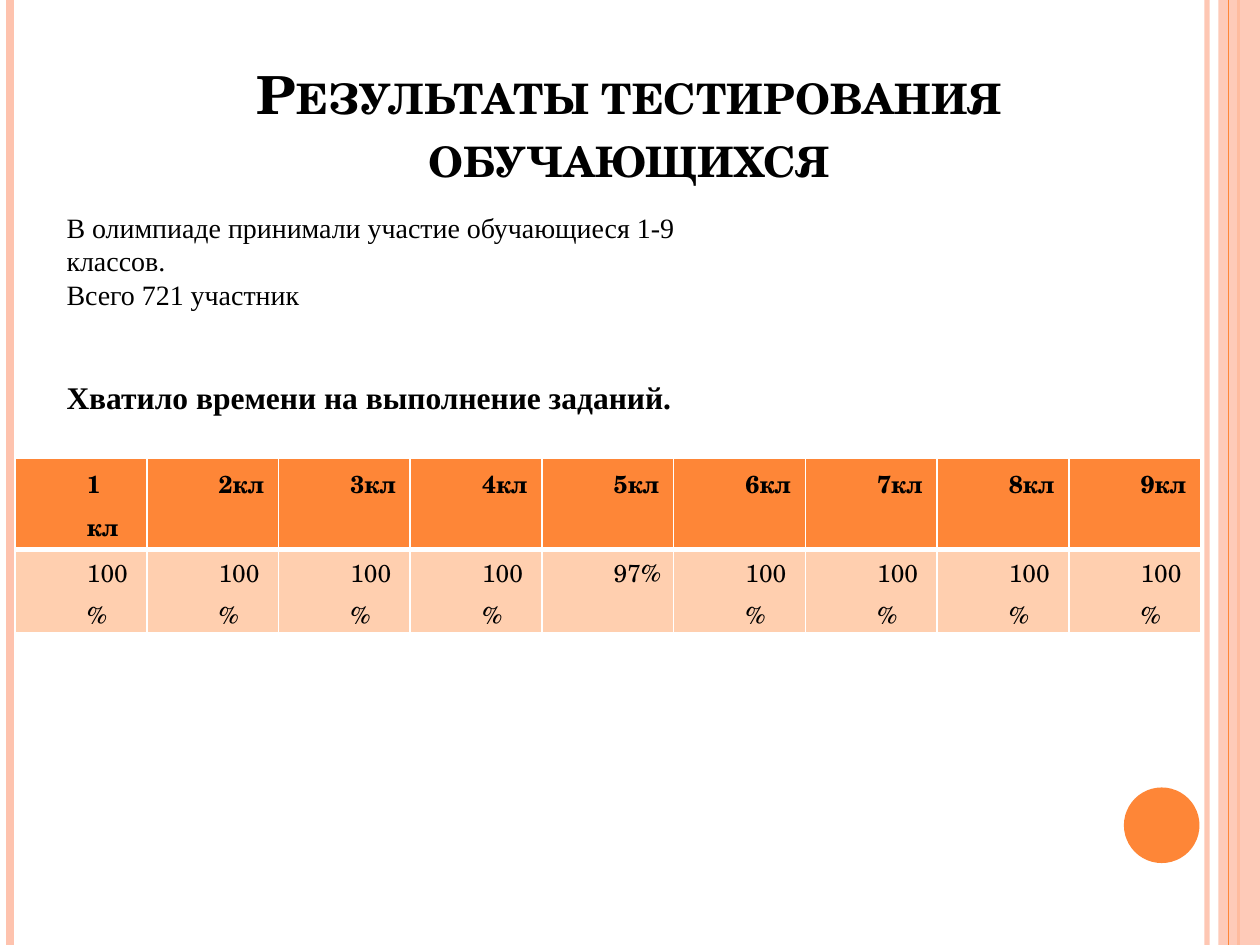
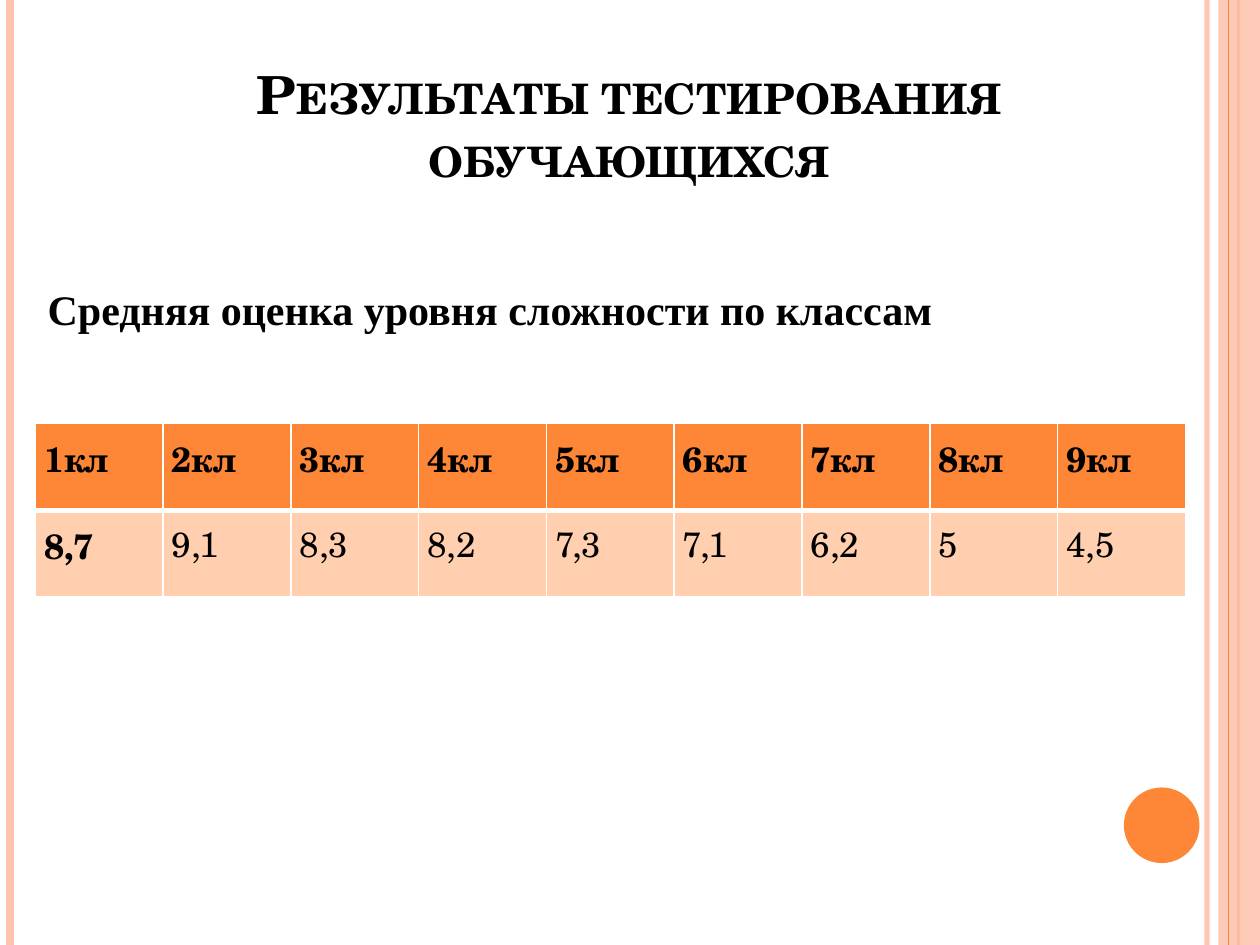
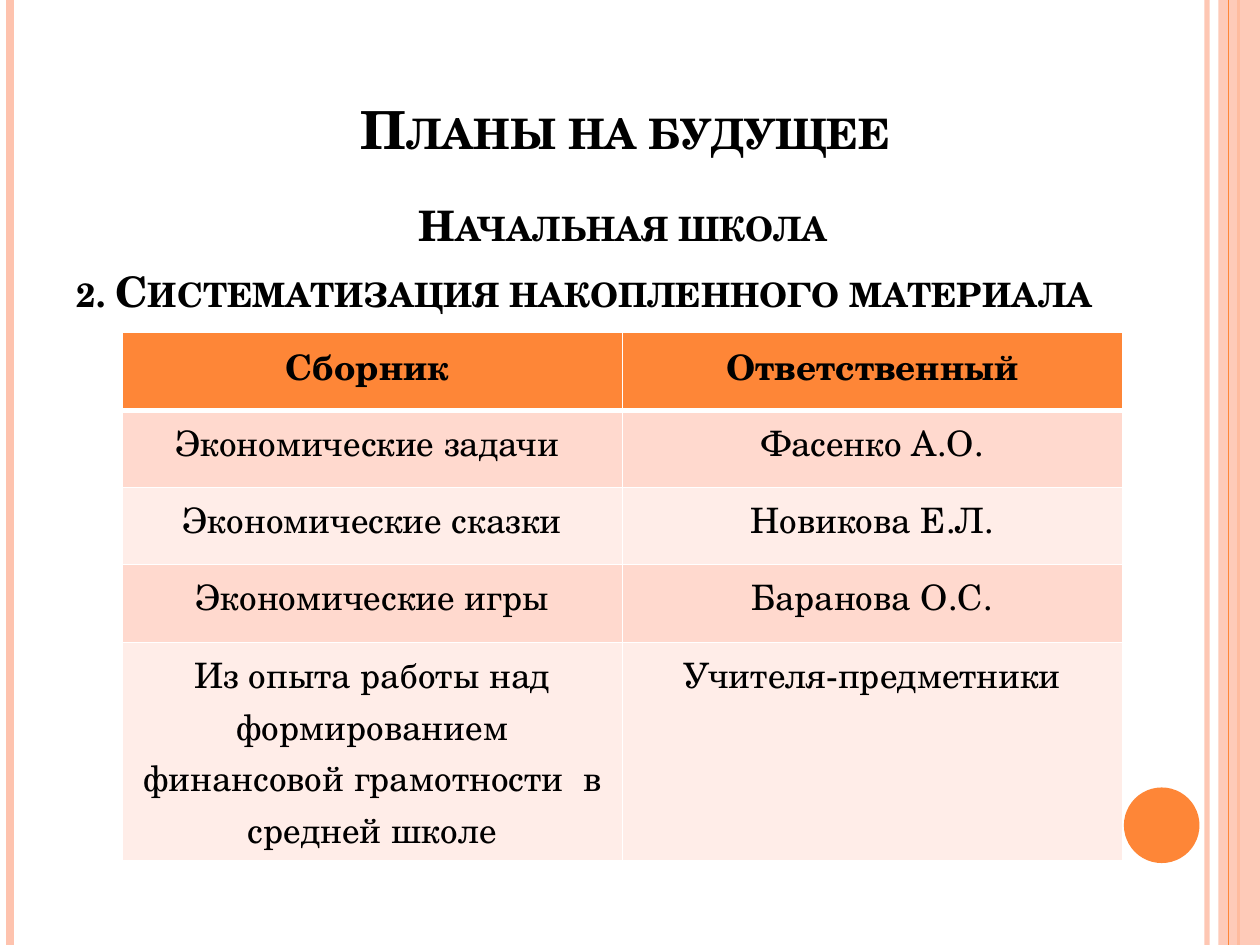
from dataclasses import dataclass

from lxml.etree import SubElement
from pptx import Presentation
from pptx.dml.color import RGBColor
from pptx.enum.shapes import MSO_CONNECTOR, MSO_SHAPE
from pptx.enum.text import MSO_ANCHOR, PP_ALIGN
from pptx.oxml.ns import qn
from pptx.util import Emu, Pt

EMU_PER_PX = 9144  # 100 px to the inch
SLIDE_WIDTH, SLIDE_HEIGHT = 1000, 750

BLACK = "000000"
WHITE = "FFFFFF"
ORANGE = "FE8637"
PEACH = "FEC3AE"
APRICOT = "FFCFAF"
ROSE = "FFD9CE"
PALE_ROSE = "FFEDE8"

SCHOLA = "TeX Gyre Schola"
TIMES = "Times New Roman"

CLASS_TABLE_MARGINS = (7, 0)
RESULTS_TITLE = "Результаты тестирования обучающихся"


@dataclass(frozen=True)
class Box:
    left: int
    top: int
    width: int
    height: int


@dataclass(frozen=True)
class Stripe:
    x: int
    color: str
    weight: float
    opacity: int = 100


@dataclass(frozen=True)
class TableStyle:
    size: int
    body_fills: tuple[str, ...]
    margins: tuple[int, int] = (10, 5)
    align: PP_ALIGN = PP_ALIGN.LEFT
    indent: int = 0
    line_spacing: float = 1.0
    bold_first_column: bool = False


STRIPES_BEHIND = (
    Stripe(958, PEACH, 3, 93),
    Stripe(8, PEACH, 4.5),
    Stripe(983, ORANGE, 1.5),
)
STRIPE_IN_FRONT = Stripe(975, ORANGE, 0.75)
SIDE_BAND = Box(967, 0, 33, SLIDE_HEIGHT)
PAGE_CIRCLE = Box(892, 625, 60, 60)
RESULTS_TITLE_BOX = Box(91, 29, 817, 125)


def px(length: int) -> Emu:
    return Emu(length * EMU_PER_PX)


def rgb(color: str) -> RGBColor:
    return RGBColor.from_string(color)


def place(box: Box) -> tuple[Emu, Emu, Emu, Emu]:
    return px(box.left), px(box.top), px(box.width), px(box.height)


def set_opacity(properties, percent: int) -> None:
    """Make the solid colour inside a fill or line partly transparent."""
    if percent < 100:
        color = next(properties.iter(qn("a:srgbClr")))
        SubElement(color, qn("a:alpha"), val=str(percent * 1000))


def add_stripe(slide, stripe: Stripe) -> None:
    connector = slide.shapes.add_connector(
        MSO_CONNECTOR.STRAIGHT, px(stripe.x), px(0), px(stripe.x), px(SLIDE_HEIGHT)
    )
    connector.line.color.rgb = rgb(stripe.color)
    connector.line.width = Pt(stripe.weight)
    properties = connector._element.spPr
    set_opacity(properties, stripe.opacity)
    SubElement(properties, qn("a:effectLst"))


def add_plain_shape(slide, preset: MSO_SHAPE, box: Box, color: str, opacity: int = 100) -> None:
    shape = slide.shapes.add_shape(preset, *place(box))
    shape.shadow.inherit = False
    shape.fill.solid()
    shape.fill.fore_color.rgb = rgb(color)
    shape.line.fill.background()
    set_opacity(shape._element.spPr, opacity)


def add_decorated_slide(presentation):
    slide = presentation.slides.add_slide(presentation.slide_layouts[6])
    for stripe in STRIPES_BEHIND:
        add_stripe(slide, stripe)
    add_plain_shape(slide, MSO_SHAPE.RECTANGLE, SIDE_BAND, PEACH, opacity=87)
    add_stripe(slide, STRIPE_IN_FRONT)
    add_plain_shape(slide, MSO_SHAPE.OVAL, PAGE_CIRCLE, ORANGE)
    return slide


def write(
    paragraph,
    text: str,
    *,
    size: int,
    font: str = SCHOLA,
    bold: bool = False,
    small_caps: bool = False,
    align: PP_ALIGN = PP_ALIGN.LEFT,
    space_before: int = 0,
    line_spacing: float = 1.0,
    indent: int = 0,
) -> None:
    paragraph.alignment = align
    paragraph.space_before = Pt(space_before)
    paragraph.line_spacing = line_spacing
    if indent:
        properties = paragraph._p.get_or_add_pPr()
        properties.set("marL", str(px(indent)))
        properties.set("indent", "0")
    run = paragraph.add_run()
    run.text = text
    run.font.size = Pt(size)
    run.font.name = font
    run.font.bold = bold
    run.font.color.rgb = rgb(BLACK)
    if small_caps:
        run._r.get_or_add_rPr().set("cap", "small")


def add_text_frame(slide, box: Box, anchor: MSO_ANCHOR, wrap: bool = True):
    frame = slide.shapes.add_textbox(*place(box)).text_frame
    frame.word_wrap = wrap
    frame.vertical_anchor = anchor
    return frame


def add_heading(slide, text: str, box: Box, size: int = 30) -> None:
    frame = add_text_frame(slide, box, MSO_ANCHOR.BOTTOM)
    write(frame.paragraphs[0], text, size=size, bold=True, small_caps=True, align=PP_ALIGN.CENTER)


def set_borders(cell, top: int, bottom: int) -> None:
    """Draw white cell borders; the side borders are 1 pt."""
    properties = cell._tc.get_or_add_tcPr()
    for side, weight in (("L", 1), ("R", 1), ("T", top), ("B", bottom)):
        line = SubElement(properties, qn(f"a:ln{side}"), w=str(Pt(weight)))
        fill = SubElement(line, qn("a:solidFill"))
        SubElement(fill, qn("a:srgbClr"), val=WHITE)


def add_table(
    slide, left: int, top: int, width: int, heights: list[int], rows: list[list[str]], style: TableStyle
) -> None:
    column_count = len(rows[0])
    box = Box(left, top, width, sum(heights))
    table = slide.shapes.add_table(len(rows), column_count, *place(box)).table
    table.horz_banding = False
    for column in table.columns:
        column.width = Emu(px(width) // column_count)
    for row_index, (texts, height) in enumerate(zip(rows, heights)):
        table.rows[row_index].height = px(height)
        is_header = row_index == 0
        fill = ORANGE if is_header else style.body_fills[(row_index - 1) % len(style.body_fills)]
        for column_index, text in enumerate(texts):
            cell = table.cell(row_index, column_index)
            cell.margin_left = cell.margin_right = px(style.margins[0])
            cell.margin_top = cell.margin_bottom = px(style.margins[1])
            set_borders(cell, top=3 if row_index == 1 else 1, bottom=3 if is_header else 1)
            cell.fill.solid()
            cell.fill.fore_color.rgb = rgb(fill)
            write(
                cell.text_frame.paragraphs[0],
                text,
                size=style.size,
                bold=is_header or (style.bold_first_column and column_index == 0),
                align=style.align,
                indent=style.indent,
                line_spacing=style.line_spacing,
            )


def build_time_slide(presentation) -> None:
    slide = add_decorated_slide(presentation)
    add_heading(slide, RESULTS_TITLE, RESULTS_TITLE_BOX)
    class_names = ["1 кл"] + [f"{number}кл" for number in range(2, 10)]
    shares = [f"{share}%" for share in (100, 100, 100, 100, 97, 100, 100, 100, 100)]
    style = TableStyle(14, (APRICOT,), CLASS_TABLE_MARGINS, indent=50, line_spacing=1.15)
    add_table(slide, 12, 364, 941, [72, 66], [class_names, shares], style)

    frame = add_text_frame(slide, Box(43, 162, 583, 177), MSO_ANCHOR.TOP)
    write(
        frame.paragraphs[0],
        "В олимпиаде принимали участие обучающиеся 1-9 классов.",
        size=16,
        font=TIMES,
    )
    write(frame.add_paragraph(), "Всего 721 участник", size=16, font=TIMES)
    write(
        frame.add_paragraph(),
        "Хватило времени на выполнение заданий.",
        size=18,
        font=TIMES,
        bold=True,
        space_before=38,
    )


def build_difficulty_slide(presentation) -> None:
    slide = add_decorated_slide(presentation)
    add_heading(slide, RESULTS_TITLE, RESULTS_TITLE_BOX)
    class_names = [f"{number}кл" for number in range(1, 10)]
    grades = ["8,7", "9,1", "8,3", "8,2", "7,3", "7,1", "6,2", "5", "4,5"]
    style = TableStyle(
        20, (APRICOT,), CLASS_TABLE_MARGINS, line_spacing=1.15, bold_first_column=True
    )
    add_table(slide, 28, 336, 913, [69, 69], [class_names, grades], style)

    frame = add_text_frame(slide, Box(28, 220, 730, 50), MSO_ANCHOR.MIDDLE, wrap=False)
    write(
        frame.paragraphs[0],
        "Средняя оценка уровня сложности по классам",
        size=24,
        font=TIMES,
        bold=True,
    )


def build_plans_slide(presentation) -> None:
    slide = add_decorated_slide(presentation)
    add_heading(slide, "Планы на будущее", Box(99, 68, 795, 64))
    add_heading(slide, "Начальная школа", Box(97, 139, 795, 64), size=24)
    add_heading(slide, "2. Систематизация накопленного материала", Box(31, 192, 866, 64), size=24)
    rows = [
        ["Сборник ", "Ответственный"],
        ["Экономические задачи ", "Фасенко А.О."],
        ["Экономические сказки", "Новикова Е.Л."],
        ["Экономические игры", "Баранова О.С."],
        [
            "Из опыта работы над формированием финансовой грамотности  в средней школе",
            "Учителя-предметники",
        ],
    ]
    style = TableStyle(20, (ROSE, PALE_ROSE), align=PP_ALIGN.CENTER)
    add_table(slide, 97, 264, 794, [62, 61, 61, 62, 173], rows, style)


def main() -> None:
    presentation = Presentation()
    presentation.slide_width = px(SLIDE_WIDTH)
    presentation.slide_height = px(SLIDE_HEIGHT)
    build_time_slide(presentation)
    build_difficulty_slide(presentation)
    build_plans_slide(presentation)
    presentation.save("out.pptx")


if __name__ == "__main__":
    main()
